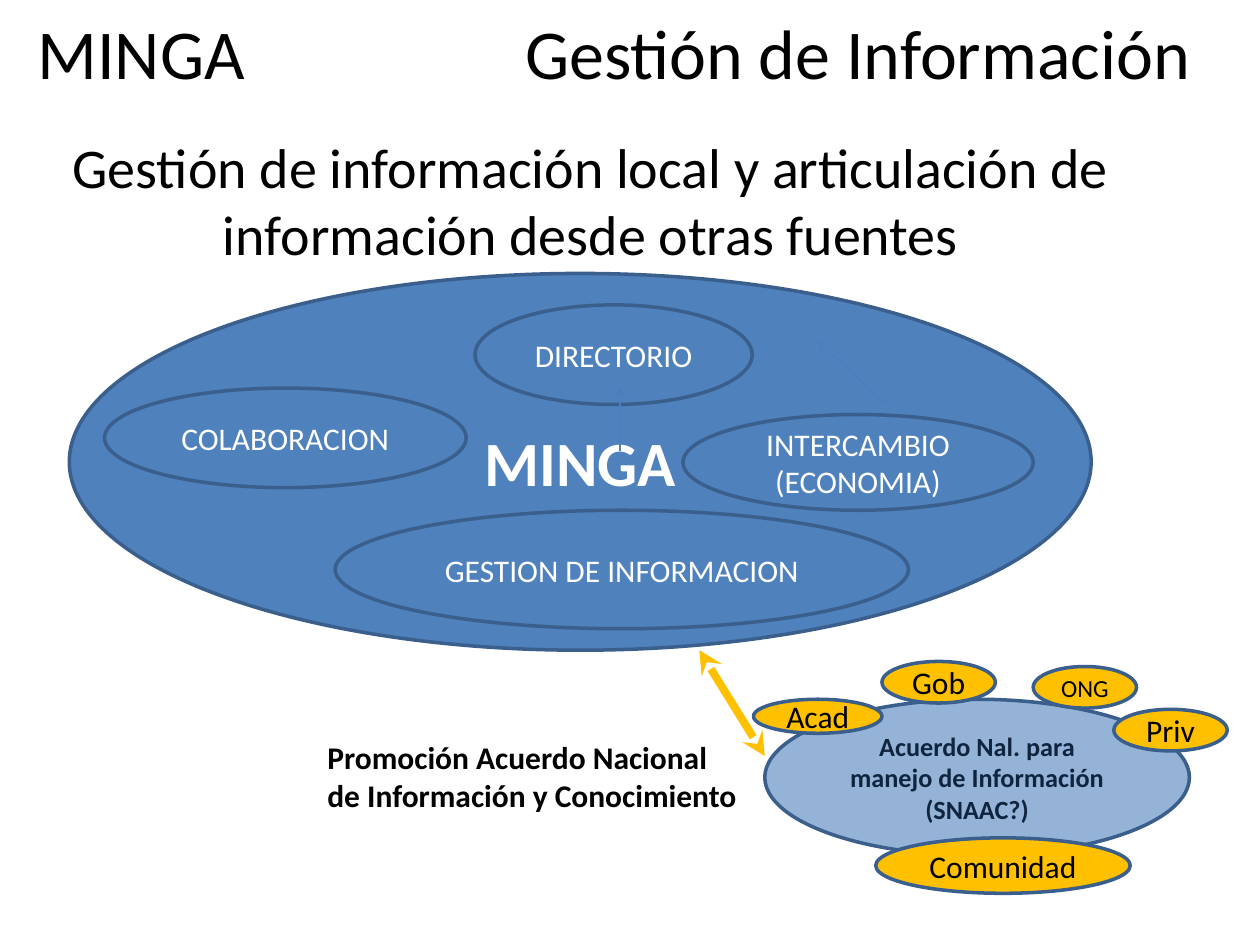
from lxml import etree
from pptx import Presentation
from pptx.dml.color import RGBColor
from pptx.enum.shapes import MSO_CONNECTOR, MSO_SHAPE
from pptx.enum.text import MSO_ANCHOR, PP_ALIGN
from pptx.oxml.ns import qn
from pptx.util import Inches, Pt

COLORS = {
    "blue": "4F81BD",
    "outline": "3A5F8C",
    "pale_blue": "95B3D7",
    "navy": "0F243E",
    "amber": "FFC000",
    "faint_blue": "4B7EBC",
    "black": "000000",
    "white": "FFFFFF",
}


def rgb(name):
    """Return the named colour."""
    return RGBColor.from_string(COLORS[name])


def write(frame, lines, size, color, bold=False, align=PP_ALIGN.CENTER):
    """Write one paragraph per line in a single style."""
    for index, line in enumerate(lines):
        paragraph = frame.add_paragraph() if index else frame.paragraphs[0]
        paragraph.text = line
        paragraph.alignment = align
        font = paragraph.font
        font.name, font.size, font.bold = "Calibri", Pt(size), bold
        font.color.rgb = rgb(color)


def add_ellipse(shapes, box, lines, fill, color, size=18, bold=False):
    """Add a labelled ellipse at box, given in inches."""
    ellipse = shapes.add_shape(MSO_SHAPE.OVAL, *map(Inches, box))
    ellipse.shadow.inherit = False
    ellipse.fill.solid()
    ellipse.fill.fore_color.rgb = rgb(fill)
    ellipse.line.color.rgb = rgb("outline")
    ellipse.line.width = Pt(2)
    frame = ellipse.text_frame
    frame.word_wrap = True
    frame.vertical_anchor = MSO_ANCHOR.MIDDLE
    write(frame, lines, size, color, bold)


def add_text(shapes, box, lines, size, wrap=False, **style):
    """Add a black text box at box, given in inches."""
    frame = shapes.add_textbox(*map(Inches, box)).text_frame
    frame.word_wrap = wrap
    write(frame, lines, size, "black", **style)
    return frame


def add_arrow(shapes, start, end, color, width, **ends):
    """Add a straight arrow with the given headEnd and tailEnd types."""
    arrow = shapes.add_connector(MSO_CONNECTOR.STRAIGHT, *map(Inches, start + end))
    arrow.line.color.rgb = rgb(color)
    arrow.line.width = Pt(width)
    outline = arrow.line._get_or_add_ln()
    for end_name, kind in ends.items():
        etree.SubElement(outline, qn(f"a:{end_name}"), type=kind)
    etree.SubElement(arrow._element.spPr, qn("a:effectLst"))


def add_title(shapes, box):
    """Add the two-part title, split by a tab stop."""
    frame = add_text(shapes, box, ["MINGA\tGestión de Información"], 40,
                     wrap=True, align=PP_ALIGN.LEFT)
    properties = frame.paragraphs[0]._p.get_or_add_pPr()
    tabs = etree.Element(qn("a:tabLst"))
    etree.SubElement(tabs, qn("a:tab"), pos=str(Inches(3.87)), algn="l")
    properties.find(qn("a:defRPr")).addprevious(tabs)


def add_agreement(shapes, box):
    """Add the national agreement and the sectors around it."""
    left, top, width, height = box
    members = shapes.add_group_shape().shapes
    add_ellipse(members, box,
                ["Acuerdo Nal. para manejo de Información", "(SNAAC?)"],
                "pale_blue", "navy", 15, True)
    sectors = [
        ("Comunidad", 0.88, 1.1, 2.02, 0.44, 18),
        ("Gob", 0.93, -0.3, 0.9, 0.33, 18),
        ("ONG", 2.13, -0.26, 0.82, 0.33, 14),
        ("Priv", 2.77, 0.08, 0.9, 0.33, 18),
    ]
    for label, x, y, w, h, size in sectors:
        add_ellipse(members, (left + x, top + y, w, h), [label],
                    "amber", "black", size)


def add_minga(shapes, box):
    """Add the MINGA ellipse with its components."""
    left, top, width, height = box
    members = shapes.add_group_shape().shapes
    add_ellipse(members, box, ["MINGA"], "blue", "white", 36, True)
    components = [
        (["DIRECTORIO"], 3.22, 0.25, 2.2, 0.79),
        (["GESTION DE INFORMACION"], 2.11, 1.88, 4.55, 0.94),
        (["INTERCAMBIO", "(ECONOMIA)"], 4.87, 1.12, 2.78, 0.76),
        (["COLABORACION"], 0.28, 0.91, 2.87, 0.79),
    ]
    for lines, x, y, w, h in components:
        add_ellipse(members, (left + x, top + y, w, h), lines, "blue", "white")
    for x1, y1, x2, y2 in [(4.37, 1.41, 4.37, 0.91), (6.49, 1.04, 5.94, 0.54)]:
        add_arrow(members, (left + x1, top + y1), (left + x2, top + y2),
                  "faint_blue", 0.75, tailEnd="arrow")


def main():
    """Build and save the slide."""
    deck = Presentation()
    deck.slide_width, deck.slide_height = Inches(10), Inches(7.5)
    shapes = deck.slides.add_slide(deck.slide_layouts[6]).shapes
    add_agreement(shapes, (6.07, 5.55, 3.37, 1.24))
    add_title(shapes, (0.2, 0.03, 9.8, 1.45))
    add_arrow(shapes, (5.55, 5.16), (6.07, 6), "amber", 4.5,
              headEnd="stealth", tailEnd="stealth")
    add_text(shapes, (2.5, 5.81, 3.47, 0.71),
             ["Promoción Acuerdo Nacional", "de Información y Conocimiento"],
             18, bold=True, align=PP_ALIGN.LEFT)
    add_minga(shapes, (0.55, 2.17, 8.11, 2.99))
    add_ellipse(shapes, (5.98, 5.55, 1.02, 0.27), ["Acad"], "amber", "black")
    add_text(shapes, (0.38, 1, 8.62, 1.18),
             ["Gestión de información local y articulación de",
              "información desde otras fuentes"], 32)
    deck.save("out.pptx")


if __name__ == "__main__":
    main()
